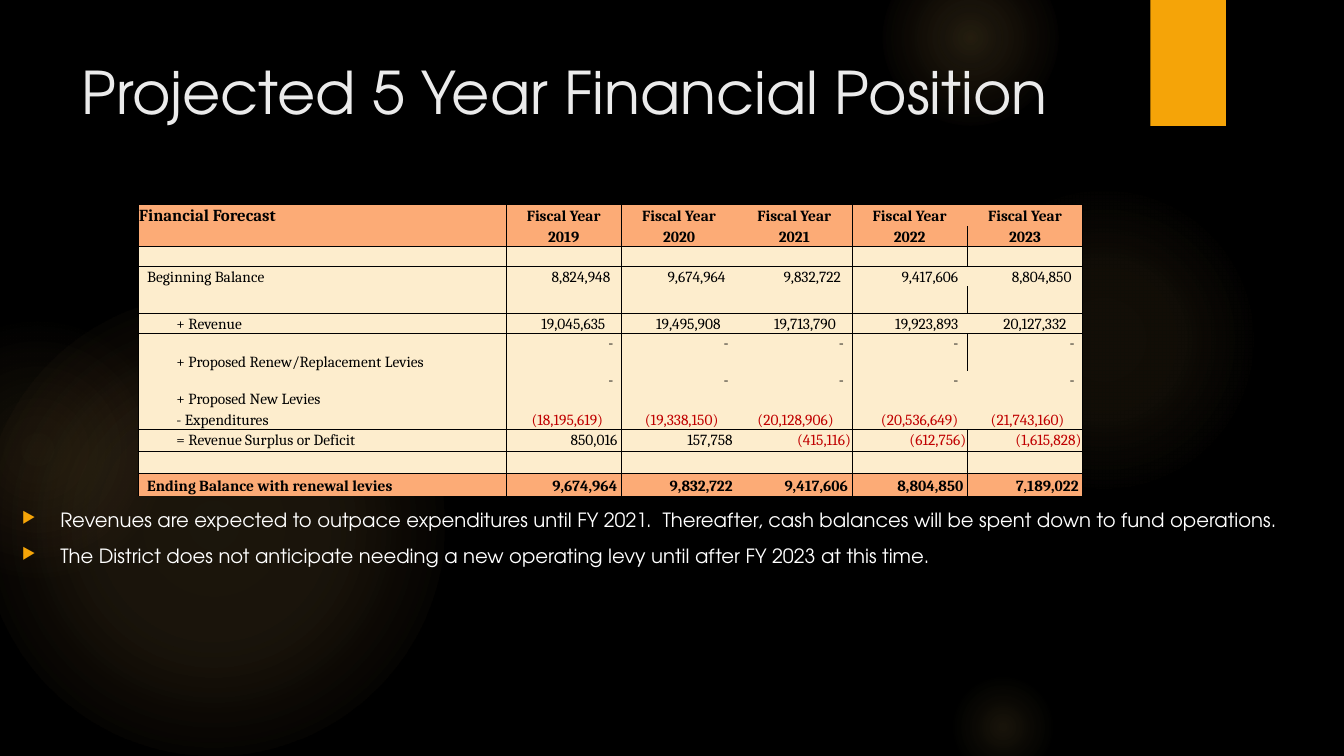
from lxml import etree
from pptx import Presentation
from pptx.dml.color import RGBColor
from pptx.enum.shapes import MSO_SHAPE
from pptx.enum.text import MSO_ANCHOR, PP_ALIGN
from pptx.oxml.ns import qn
from pptx.util import Inches, Pt

OVAL, RECT = MSO_SHAPE.OVAL, MSO_SHAPE.RECTANGLE
TOP, MIDDLE, BOTTOM = MSO_ANCHOR.TOP, MSO_ANCHOR.MIDDLE, MSO_ANCHOR.BOTTOM
LEFT, CENTER, RIGHT = PP_ALIGN.LEFT, PP_ALIGN.CENTER, PP_ALIGN.RIGHT

SANS, SERIF = "TeX Gyre Adventor", "Cambria"
NO_STYLE = "{2D5ABB26-0587-4C30-8999-92F81FD0307C}"
COLORS = {"bg": "000000", "glow": "FAC96A", "ember": "F59B74", "accent": "F5A408",
          "title": "EBEBEB", "body": "FFFFFF", "ink": "000000", "loss": "C00000",
          "band": "FCAB76", "cream": "FDEDCD"}

GLOWS = [
    (-0.17, 2.92, 4.58, [(0, 11), (36, 10), (75, 0)], "glow"),
    (-0.92, 3.17, 2.58, [(0, 8), (36, 5), (71, 0)], "ember"),
    (9.41, 1.83, 3.08, [(0, 7), (36, 6), (69, 0)], "glow"),
    (8.75, -0.5, 1.75, [(0, 14), (36, 7), (73, 0)], "glow"),
    (9.41, 6.67, 1.08, [(0, 10), (31, 5), (66, 0)], "glow"),
]
BULLETS = [
    "Revenues are expected to outpace expenditures until FY 2021.  Thereafter, "
    "cash balances will be spent down to fund operations.",
    "The District does not anticipate needing a new operating levy until after FY 2023 at this time.",
]

LABEL_WIDTHS = [0.59, 1.65, 1.0, 0.41]
HEIGHTS = [0.2, 0.2, 0.2, 0.2, 0.27, 0.2, 0.37, 0.37, 0.21, 0.22, 0.22, 0.22]
HEADER_ROWS, BAND_ROWS, RULED_ROWS = (0, 1), (0, 1, 11), (1, 4, 8, 10)
CENTERED_YEAR = 3
LABELS = {
    0: ("Financial Forecast", 2, 0.01),
    3: ("Beginning Balance", 2, 0.09),
    5: ("+ Revenue", 2, 0.38),
    6: ("+ Proposed Renew/Replacement Levies", 3, 0.38),
    7: ("+ Proposed New Levies", 2, 0.38),
    8: ("- Expenditures", 2, 0.38),
    9: ("= Revenue Surplus or Deficit", 3, 0.38),
    11: ("Ending Balance with renewal levies", 3, 0.09),
}
VALUES = {
    0: ["Fiscal Year"] * 5,
    1: ["2019", "2020", "2021", "2022", "2023"],
    3: ["8,824,948", "9,674,964", "9,832,722", "9,417,606", "8,804,850"],
    5: ["19,045,635", "19,495,908", "19,713,790", "19,923,893", "20,127,332"],
    6: ["-"] * 5,
    7: ["-"] * 5,
    8: ["(18,195,619)", "(19,338,150)", "(20,128,906)", "(20,536,649)", "(21,743,160)"],
    9: ["850,016", "157,758", "(415,116)", "(612,756)", "(1,615,828)"],
    11: ["9,674,964", "9,832,722", "9,417,606", "8,804,850", "7,189,022"],
}
RIGHT_PADS = {3: 0.11, 5: 0.16, 6: 0.08, 7: 0.08, 8: 0.18}


def rgb(name):
    """Return the named colour."""
    return RGBColor.from_string(COLORS[name])


def sub(parent, tag, **attrs):
    """Append a DrawingML element."""
    return etree.SubElement(parent, qn(tag), {k: str(v) for k, v in attrs.items()})


def add_run(p, text, font, size, color, bold=False):
    """Add one styled run to a paragraph."""
    r = p.add_run()
    r.text = text
    r.font.name, r.font.size, r.font.bold = font, Pt(size), bold
    r.font.color.rgb = rgb(color)


def add_plain(slide, kind, box):
    """Add a preset shape without line or shadow."""
    s = slide.shapes.add_shape(kind, *map(Inches, box))
    s.line.fill.background()
    s.shadow.inherit = False
    return s


def add_text_frame(slide, box):
    """Add a wrapping text box and return its frame."""
    tf = slide.shapes.add_textbox(*map(Inches, box)).text_frame
    tf.word_wrap = True
    tf.vertical_anchor = TOP
    return tf


def add_glow(slide, left, top, size, stops, edge):
    """Add a circle of light that fades towards its edge."""
    s = add_plain(slide, OVAL, (left, top, size, size))
    grad = etree.Element(qn("a:gradFill"), rotWithShape="1")
    gs_list = sub(grad, "a:gsLst")
    for pos, alpha in stops:
        gs = sub(gs_list, "a:gs", pos=pos * 1000)
        clr = sub(gs, "a:srgbClr", val=COLORS[edge if alpha == 0 else "glow"])
        sub(clr, "a:alpha", val=alpha * 1000)
    circle = sub(grad, "a:path", path="circle")
    sub(circle, "a:fillToRect", l=50000, t=50000, r=50000, b=50000)
    s._element.spPr.insert(2, grad)


def add_backdrop(slide):
    """Paint the dark background, the glows and the accent tab."""
    slide.background.fill.solid()
    slide.background.fill.fore_color.rgb = rgb("bg")
    for glow in GLOWS:
        add_glow(slide, *glow)
    tab = add_plain(slide, RECT, (11.41, 0, 0.75, 1.25))
    tab.fill.solid()
    tab.fill.fore_color.rgb = rgb("accent")


def add_title(slide, box):
    """Add the slide title."""
    p = add_text_frame(slide, box).paragraphs[0]
    add_run(p, "Projected 5 Year Financial Position", SANS, 42, "title")


def add_bullets(slide, box):
    """Add the bulleted remarks."""
    tf = add_text_frame(slide, box)
    for i, text in enumerate(BULLETS):
        p = tf.add_paragraph() if i else tf.paragraphs[0]
        pPr = p._p.get_or_add_pPr()
        pPr.set("marL", str(Inches(0.38)))
        pPr.set("indent", str(-Inches(0.38)))
        sub(sub(pPr, "a:buClr"), "a:srgbClr", val=COLORS["accent"])
        sub(pPr, "a:buSzPct", val=80000)
        sub(pPr, "a:buChar", char="▶")
        p.space_before, p.space_after = Pt(3 if i else 0), Pt(6)
        add_run(p, text, SANS, 14, "body")


def style_cell(cell, row, col):
    """Draw the borders and fill of a cell and shrink its empty line."""
    tcPr = cell._tc.get_or_add_tcPr()
    edges = {"L": col in (0, 4, 7), "R": col in (3, 6, 8),
             "T": row == 0 and col > 3 or row - 1 in RULED_ROWS, "B": row in RULED_ROWS}
    for side, drawn in edges.items():
        if drawn:
            ln = sub(tcPr, f"a:ln{side}", w=Pt(0.5))
            sub(sub(ln, "a:solidFill"), "a:srgbClr", val=COLORS["ink"])
    cell.fill.solid()
    cell.fill.fore_color.rgb = rgb("band" if row in BAND_ROWS else "cream")
    cell.margin_left = cell.margin_right = cell.margin_top = Inches(0.01)
    cell.margin_bottom = 0
    cell.vertical_anchor = MIDDLE if row == 9 else BOTTOM
    if col > 3 and row in (6, 7):
        cell.vertical_anchor = TOP
    if not (col == 0 and row in LABELS or col > 3 and row in VALUES):
        sub(cell.text_frame.paragraphs[0]._p, "a:endParaRPr", sz=800)


def fill_value(cell, row, year, text):
    """Write one heading or amount."""
    p = cell.text_frame.paragraphs[0]
    loss = text.startswith("(")
    p.alignment = CENTER if row in HEADER_ROWS else RIGHT
    if row not in HEADER_ROWS:
        pad = RIGHT_PADS.get(row, 0.01 if loss else 0.04)
        if row in RIGHT_PADS and year == CENTERED_YEAR:
            pad = 0.09
        cell.margin_right = Inches(pad)
    add_run(p, text, SERIF, 11, "loss" if loss else "ink", row in BAND_ROWS)


def add_forecast(slide, box):
    """Add the five-year forecast table."""
    year_width = (box[2] - sum(LABEL_WIDTHS)) / 5
    widths = LABEL_WIDTHS + [year_width] * 5
    table = slide.shapes.add_table(len(HEIGHTS), len(widths), *map(Inches, box)).table
    table.first_row = table.horz_banding = False
    table._tbl.tblPr.find(qn("a:tableStyleId")).text = NO_STYLE
    for column, width in zip(table.columns, widths):
        column.width = Inches(width)
    for row, height in enumerate(HEIGHTS):
        table.rows[row].height = Inches(height)
        for col in range(len(widths)):
            style_cell(table.cell(row, col), row, col)
        for year, text in enumerate(VALUES.get(row, [])):
            fill_value(table.cell(row, 4 + year), row, year, text)
    for row, (text, span, indent) in LABELS.items():
        cell = table.cell(row, 0)
        cell.merge(table.cell(row, span - 1))
        cell.margin_left = Inches(indent)
        p = cell.text_frame.paragraphs[0]
        p.alignment = LEFT
        add_run(p, text, SERIF, 11 if row else 12, "ink", row in BAND_ROWS)


def main():
    """Build the slide and save it."""
    prs = Presentation()
    prs.slide_width, prs.slide_height = Inches(13.33), Inches(7.5)
    slide = prs.slides.add_slide(prs.slide_layouts[6])
    add_backdrop(slide)
    add_title(slide, (0.71, 0.5, 10.29, 1.53))
    add_bullets(slide, (0.12, 4.99, 12.73, 0.76))
    add_forecast(slide, (1.37, 2.03, 9.37, sum(HEIGHTS)))
    prs.save("out.pptx")


if __name__ == "__main__":
    main()
